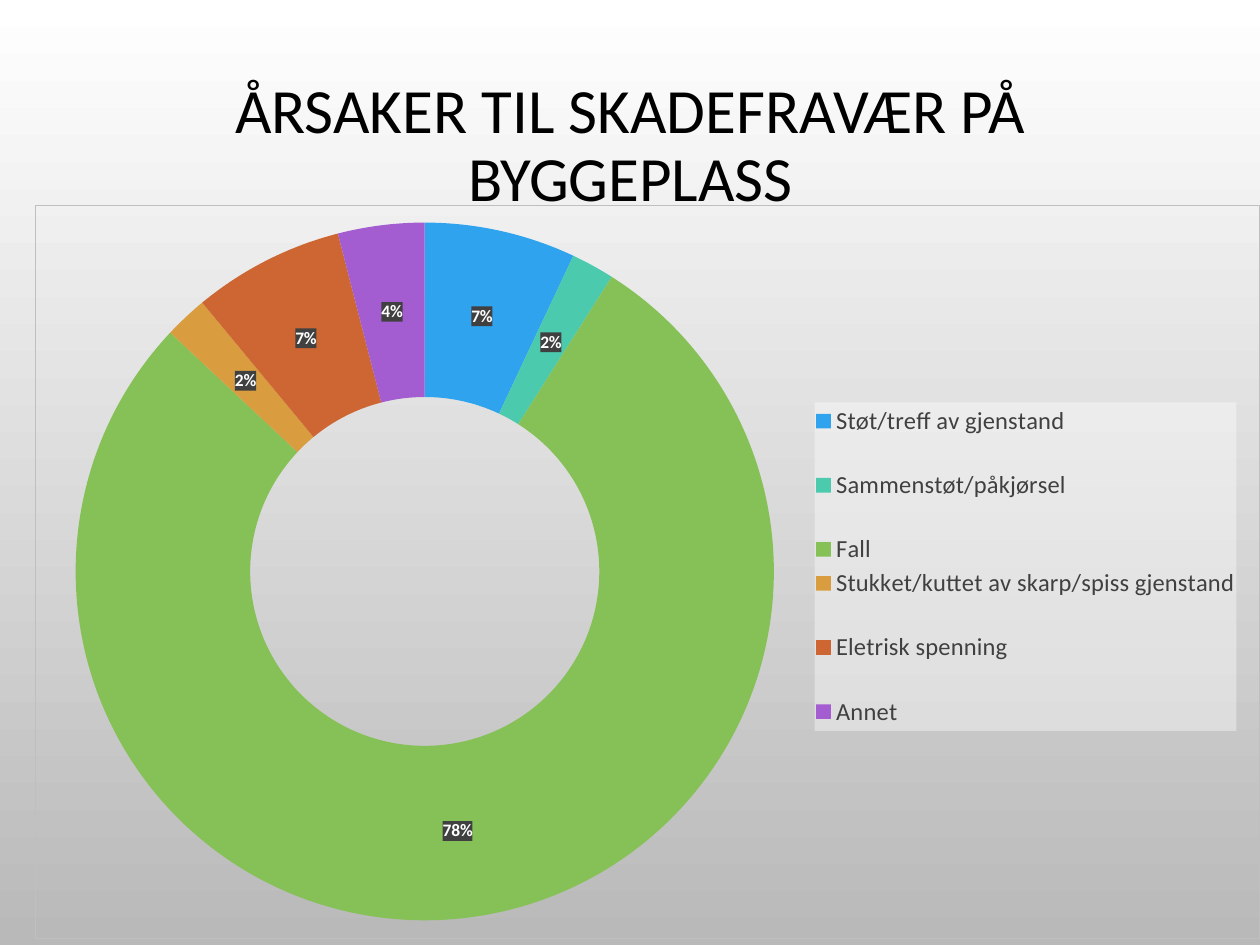
"""Build a slide with a doughnut chart of causes of injury absence on building sites."""
from pptx import Presentation
from pptx.chart.data import CategoryChartData
from pptx.dml.color import RGBColor
from pptx.enum.chart import XL_CHART_TYPE as ChartType, XL_LEGEND_POSITION as LegendPosition
from pptx.enum.text import MSO_ANCHOR as Anchor, PP_ALIGN as Align
from pptx.oxml import parse_xml
from pptx.oxml.ns import nsdecls, qn
from pptx.util import Emu, Pt

PX_PER_INCH = 126
FONT = "Calibri"
BLACK = RGBColor(0x00, 0x00, 0x00)
WHITE = RGBColor(0xFF, 0xFF, 0xFF)
SILVER = RGBColor(0xB9, 0xB9, 0xB9)
BORDER = RGBColor(0xBF, 0xBF, 0xBF)
CHARCOAL = RGBColor(0x40, 0x40, 0x40)

TITLE = "ÅRSAKER TIL SKADEFRAVÆR PÅ BYGGEPLASS"
CAUSES = [
    ("Støt/treff av gjenstand\n", 7, RGBColor(0x2F, 0xA3, 0xEE)),
    ("Sammenstøt/påkjørsel\n", 2, RGBColor(0x4B, 0xCA, 0xAD)),
    ("Fall", 78, RGBColor(0x86, 0xC1, 0x57)),
    ("Stukket/kuttet av skarp/spiss gjenstand\n", 2, RGBColor(0xD9, 0x9C, 0x3F)),
    ("Eletrisk spenning\n", 7, RGBColor(0xCE, 0x66, 0x33)),
    ("Annet", 4, RGBColor(0xA3, 0x5D, 0xD1)),
]
CHART_BOX = (35, 205, 1225, 734)
RING_BOX = (75, 222, 699, 699)
LEGEND_BOX = (815, 402, 422, 329)


def px(length):
    """Turn pixels into EMU."""
    return Emu(round(length * 914400 / PX_PER_INCH))


def set_font(font, size, color, bold=False):
    """Give a font the slide's typeface with a size and colour."""
    font.name, font.size, font.bold = FONT, Pt(size), bold
    font.color.rgb = color


def paint_background(slide):
    """Fill the background from white at the top to grey at the bottom."""
    fill = slide.background.fill
    fill.gradient()
    fill.gradient_angle = 270
    for stop, color, position in zip(fill.gradient_stops, (WHITE, SILVER), (0, 1)):
        stop.color.rgb = color
        stop.position = position


def add_title(slide):
    """Place and format the title placeholder."""
    title = slide.shapes.title
    title.left, title.top, title.width, title.height = map(px, (95, 37, 1071, 220))
    frame = title.text_frame
    frame.word_wrap = True
    frame.vertical_anchor = Anchor.MIDDLE
    paragraph = frame.paragraphs[0]
    paragraph.alignment = Align.CENTER
    paragraph.line_spacing = 0.9
    run = paragraph.add_run()
    run.text = TITLE
    set_font(run.font, 36, BLACK)


def style_area(element, fill=None, alpha=0, line=None):
    """Give a chart part a translucent fill and an outline."""
    paint = (f'<a:solidFill><a:srgbClr val="{fill}"><a:alpha val="{alpha * 1000}"/>'
             '</a:srgbClr></a:solidFill>') if fill else "<a:noFill/>"
    stroke = f'<a:solidFill><a:srgbClr val="{line}"/></a:solidFill>' if line else "<a:noFill/>"
    area = parse_xml(f'<c:spPr {nsdecls("c", "a")}>{paint}'
                     f'<a:ln w="{Pt(0.75)}">{stroke}</a:ln></c:spPr>')
    element.find(qn("c:txPr")).addprevious(area)


def set_layout(element, box, index, inner=False):
    """Fix a chart part to a box given in slide pixels."""
    old = element.find(qn("c:layout"))
    if old is not None:
        element.remove(old)
    left, top, width, height = CHART_BOX
    shares = ((box[0] - left) / width, (box[1] - top) / height, box[2] / width, box[3] / height)
    modes = '<c:layoutTarget val="inner"/>' if inner else ""
    modes += '<c:xMode val="edge"/><c:yMode val="edge"/>'
    sizes = "".join(f'<c:{name} val="{share:.4f}"/>' for name, share in zip("xywh", shares))
    element.insert(index, parse_xml(f'<c:layout {nsdecls("c")}><c:manualLayout>{modes}{sizes}'
                                    '</c:manualLayout></c:layout>'))


def format_legend(chart):
    """Show the legend on the right on a pale panel."""
    chart.has_legend = True
    legend = chart.legend
    legend.position = LegendPosition.RIGHT
    legend.include_in_layout = False
    set_font(legend.font, 14, CHARCOAL)
    element = chart.element.find(".//" + qn("c:legend"))
    set_layout(element, LEGEND_BOX, 1)
    style_area(element, WHITE, 39)


def format_series(series):
    """Colour the slices and label them with percentages."""
    for index, (_, _, color) in enumerate(CAUSES):
        fill = series.points[index].format.fill
        fill.solid()
        fill.fore_color.rgb = color
    labels = series.data_labels
    labels.show_value = False
    labels.show_percentage = True
    labels.number_format = "0%"
    labels.number_format_is_linked = False
    set_font(labels.font, 10, WHITE, bold=True)
    style_area(labels._element, CHARCOAL, 90)


def add_doughnut(slide):
    """Add the doughnut chart of causes."""
    data = CategoryChartData()
    data.categories = [name for name, _, _ in CAUSES]
    data.add_series("Series 1", [value for _, value, _ in CAUSES])
    chart = slide.shapes.add_chart(ChartType.DOUGHNUT, *map(px, CHART_BOX), data).chart
    chart.has_title = False
    set_font(chart.font, 10, BLACK)
    style_area(chart.element, line=BORDER)
    set_layout(chart.element.find(".//" + qn("c:plotArea")), RING_BOX, 0, inner=True)
    format_series(chart.plots[0].series[0])
    format_legend(chart)


def main():
    """Build and save the slide."""
    presentation = Presentation()
    presentation.slide_width, presentation.slide_height = px(1260), px(945)
    slide = presentation.slides.add_slide(presentation.slide_layouts[5])
    paint_background(slide)
    add_title(slide)
    add_doughnut(slide)
    presentation.save("out.pptx")


if __name__ == "__main__":
    main()
